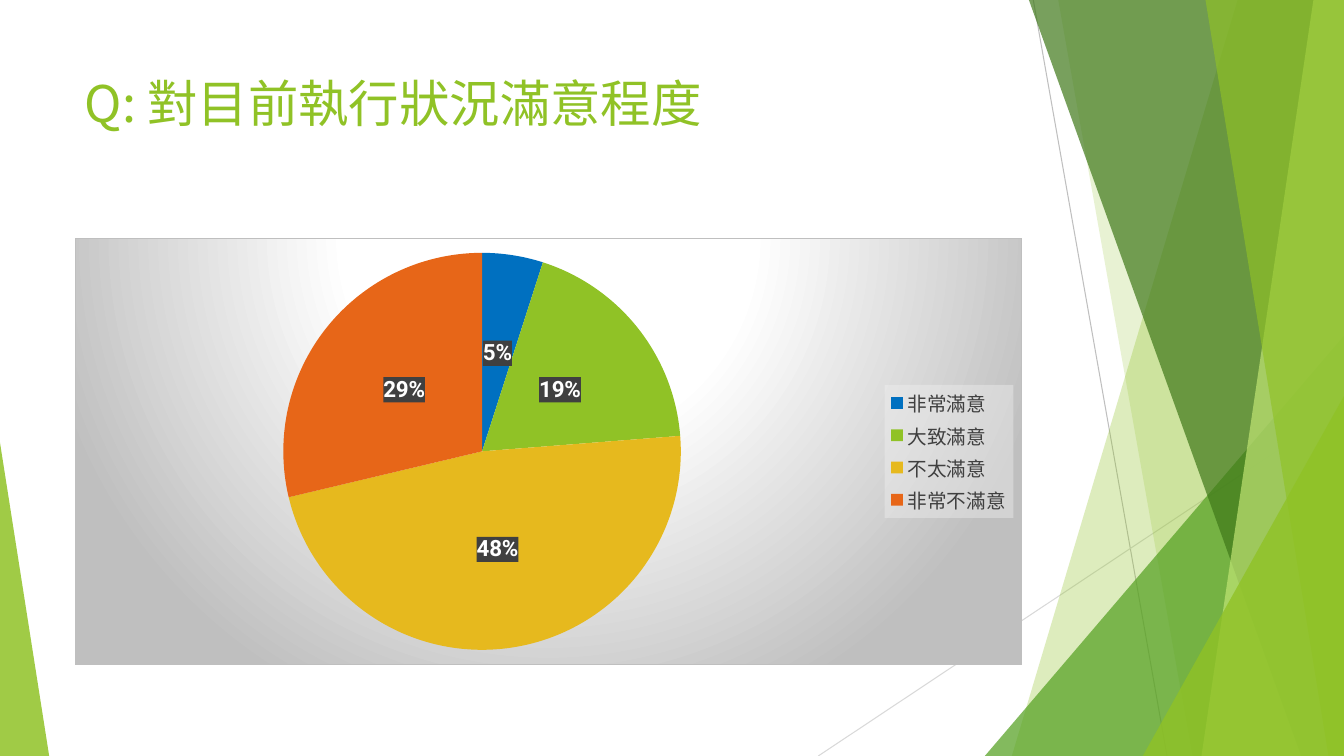
from lxml import etree
from pptx import Presentation
from pptx.chart.data import CategoryChartData
from pptx.dml.color import RGBColor
from pptx.enum.chart import XL_CHART_TYPE as ChartType, XL_LABEL_POSITION as LabelPosition
from pptx.enum.chart import XL_LEGEND_POSITION as LegendPosition
from pptx.enum.shapes import MSO_CONNECTOR as Connector, MSO_SHAPE as Shape
from pptx.enum.text import MSO_ANCHOR as Anchor, PP_ALIGN as Align
from pptx.oxml import parse_xml
from pptx.oxml.ns import nsdecls, qn
from pptx.util import Cm, Pt

LIME = RGBColor(0x90, 0xC2, 0x26)
PALE_LIME = RGBColor(0xC0, 0xE4, 0x74)
GREEN = RGBColor(0x54, 0xA0, 0x21)
DARK_GREEN = RGBColor(0x3F, 0x78, 0x19)
BLUE = RGBColor(0x00, 0x70, 0xC0)
YELLOW = RGBColor(0xE6, 0xB9, 0x1E)
ORANGE = RGBColor(0xE7, 0x66, 0x18)
GRAY = RGBColor(0xBF, 0xBF, 0xBF)
LIGHT_GRAY = RGBColor(0xD9, 0xD9, 0xD9)
DARK_GRAY = RGBColor(0x40, 0x40, 0x40)
WHITE = RGBColor(0xFF, 0xFF, 0xFF)
BLACK = RGBColor(0, 0, 0)
CJK_FONT = "Noto Sans CJK SC"
LATIN_FONT = "Roboto"
WIDTH, HEIGHT = 33.87, 19.05


def paint(shape, color, opacity):
    """Give a shape a translucent fill, with no outline or shadow."""
    shape.shadow.inherit = False
    shape.line.fill.background()
    shape.fill.solid()
    shape.fill.fore_color.rgb = color
    color_element = shape.fill._xPr.find(qn("a:solidFill"))[0]
    etree.SubElement(color_element, qn("a:alpha"), val=str(opacity * 1000))


def insert_chart_format(parent, content):
    """Put shape properties ahead of the text properties of a chart part."""
    properties = parse_xml(f'<c:spPr {nsdecls("c", "a")}>{content}</c:spPr>')
    parent.find(qn("c:txPr")).addprevious(properties)


presentation = Presentation()
presentation.slide_width, presentation.slide_height = Cm(WIDTH), Cm(HEIGHT)
slide = presentation.slides.add_slide(presentation.slide_layouts[5])
shapes = slide.shapes

# Thin lines behind the facets
for start_x, start_y, end_x, color in [
    (26.04, 0, 29.41, GRAY),
    (WIDTH, 10.24, 20.62, LIGHT_GRAY),
]:
    line = shapes.add_connector(
        Connector.STRAIGHT, Cm(start_x), Cm(start_y), Cm(end_x), Cm(HEIGHT)
    )
    line.line.color.rgb = color
    line.line.width = Pt(0.75)
    etree.SubElement(line._element.spPr, qn("a:effectLst"))

# Facets reach the right and bottom edges: top x, top y, bottom x, colour, opacity
for top_x, top_y, bottom_x, color, opacity in [
    (31.19, 0, 25.5, LIME, 30),
    (26.67, 0, 30.05, LIME, 20),
    (WIDTH, 8.46, 24.82, GREEN, 72),
    (25.93, 0, 32.79, DARK_GREEN, 70),
    (33.1, 0, 30.28, PALE_LIME, 70),
    (30.38, 0, 33.48, LIME, 65),
    (WIDTH, 9.98, 28.8, LIME, 80),
]:
    if top_x == WIDTH:
        facet = shapes.add_shape(
            Shape.ISOSCELES_TRIANGLE,
            Cm(bottom_x), Cm(top_y), Cm(WIDTH - bottom_x), Cm(HEIGHT - top_y),
        )
        facet.adjustments[0] = 1
    else:
        builder = shapes.build_freeform(Cm(top_x), Cm(top_y))
        corners = [(WIDTH, top_y), (WIDTH, HEIGHT), (bottom_x, HEIGHT)]
        builder.add_line_segments([(Cm(x), Cm(y)) for x, y in corners])
        facet = builder.convert_to_shape()
    paint(facet, color, opacity)

left_facet = shapes.add_shape(
    Shape.ISOSCELES_TRIANGLE, Cm(0), Cm(11.15), Cm(1.24), Cm(7.9)
)
left_facet.adjustments[0] = 0
paint(left_facet, LIME, 85)

# Title
title = shapes.title
title.left, title.top, title.width, title.height = Cm(1.88), Cm(1.7), Cm(23.88), Cm(3.66)
frame = title.text_frame
frame.text = "Q: 對目前執行狀況滿意程度"
frame.word_wrap = True
frame.vertical_anchor = Anchor.TOP
paragraph = frame.paragraphs[0]
paragraph.alignment = Align.LEFT
font = paragraph.runs[0].font
font.size, font.name, font.color.rgb = Pt(36), CJK_FONT, LIME
etree.SubElement(font._element, qn("a:ea"), typeface=CJK_FONT)

# Satisfaction pie
chart_data = CategoryChartData()
chart_data.categories = ["非常滿意", "大致滿意", "不太滿意", "非常不滿意"]
chart_data.add_series("Series 1", [5, 19, 48, 29])
chart = shapes.add_chart(
    ChartType.PIE, Cm(1.88), Cm(5.99), Cm(23.88), Cm(10.77), chart_data
).chart
chart.has_title = False
chart.font.size, chart.font.name, chart.font.color.rgb = Pt(10), LATIN_FONT, BLACK
insert_chart_format(
    chart._chartSpace,
    '<a:gradFill><a:gsLst>'
    '<a:gs pos="0"><a:srgbClr val="FFFFFF"/></a:gs>'
    '<a:gs pos="39000"><a:srgbClr val="FFFFFF"/></a:gs>'
    '<a:gs pos="100000"><a:srgbClr val="BFBFBF"/></a:gs></a:gsLst>'
    '<a:path path="circle"><a:fillToRect l="50000" t="-80000" r="50000" b="180000"/></a:path>'
    '</a:gradFill><a:ln w="9525"><a:solidFill><a:srgbClr val="BFBFBF"/></a:solidFill></a:ln>',
)

plot = chart.plots[0]
plot.vary_by_categories = True
for index, color in enumerate([BLUE, LIME, YELLOW, ORANGE]):
    slice_fill = plot.series[0].points[index].format.fill
    slice_fill.solid()
    slice_fill.fore_color.rgb = color

plot_area = chart._chartSpace.chart.plotArea
for old_layout in plot_area.findall(qn("c:layout")):
    plot_area.remove(old_layout)
plot_area.insert(0, parse_xml(
    f'<c:layout {nsdecls("c")}><c:manualLayout><c:layoutTarget val="inner"/>'
    '<c:xMode val="edge"/><c:yMode val="edge"/><c:x val="0.22"/><c:y val="0.03"/>'
    '<c:w val="0.42"/><c:h val="0.94"/></c:manualLayout></c:layout>'
))

labels = plot.series[0].data_labels
labels.show_percentage = True
labels.show_value = False
labels.show_category_name = False
labels.show_legend_key = False
labels.number_format, labels.number_format_is_linked = "0%", False
labels.position = LabelPosition.CENTER
font = labels.font
font.size, font.bold, font.name, font.color.rgb = Pt(16), True, LATIN_FONT, WHITE
insert_chart_format(
    labels._element,
    '<a:solidFill><a:srgbClr val="404040"><a:alpha val="90000"/></a:srgbClr></a:solidFill>',
)

chart.has_legend = True
legend = chart.legend
legend.position = LegendPosition.RIGHT
legend.include_in_layout = False
font = legend.font
font.size, font.name, font.color.rgb = Pt(14), LATIN_FONT, DARK_GRAY
insert_chart_format(
    legend._element,
    '<a:solidFill><a:srgbClr val="F2F2F2"><a:alpha val="40000"/></a:srgbClr></a:solidFill>',
)

presentation.save("out.pptx")
